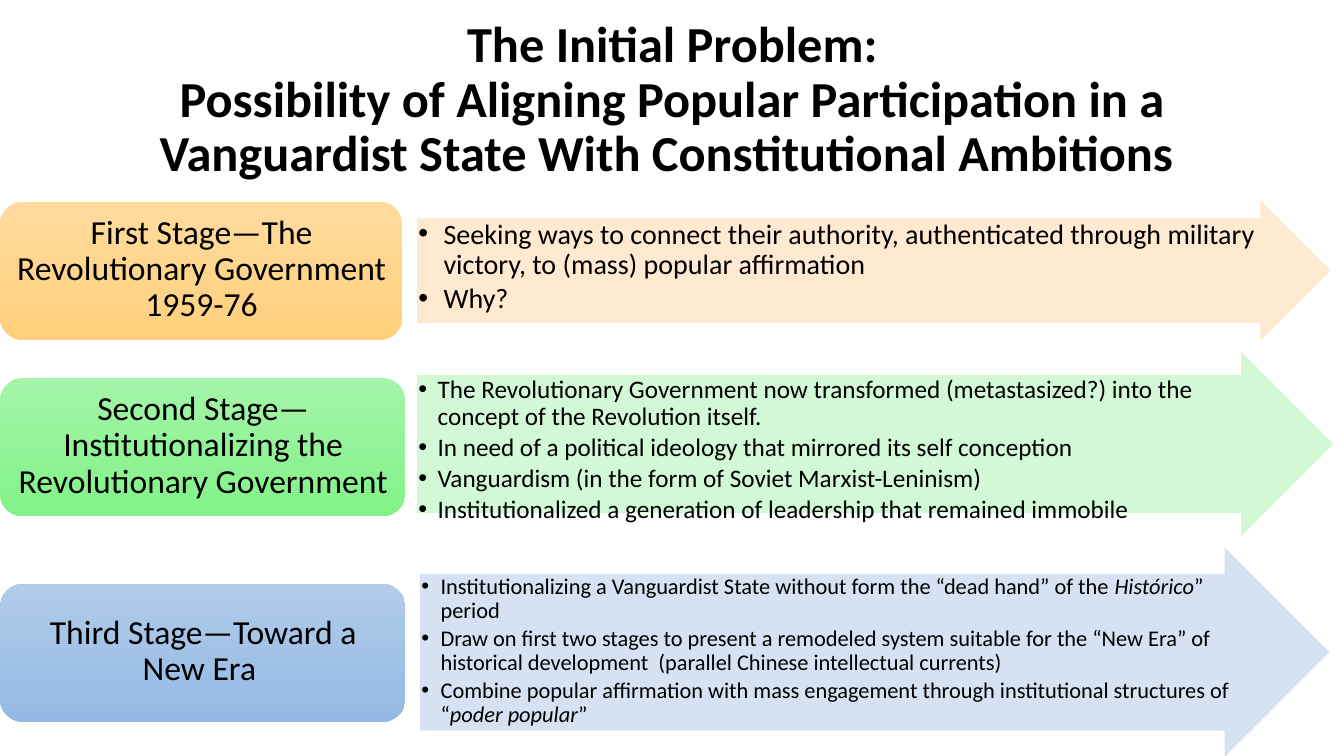
from lxml.etree import SubElement
from pptx import Presentation
from pptx.dml.color import RGBColor
from pptx.enum.shapes import MSO_SHAPE as Preset
from pptx.enum.text import MSO_ANCHOR as Anchor, PP_ALIGN as Align
from pptx.oxml.ns import qn
from pptx.util import Inches, Pt


def color(hex_code):
    return RGBColor.from_string(hex_code)


def add_text(left, top, width, height, paragraphs, size, anchor, bold=False, indent=None):
    box = slide.shapes.add_textbox(Inches(left), Inches(top), Inches(width), Inches(height))
    frame = box.text_frame
    frame.word_wrap = True
    frame.vertical_anchor = anchor
    if indent:
        frame.margin_left = frame.margin_right = Inches(0.01)
        frame.margin_top = frame.margin_bottom = Inches(0.01)
    for index, pieces in enumerate(paragraphs):
        paragraph = frame.add_paragraph() if index else frame.paragraphs[0]
        paragraph.line_spacing = 0.9
        paragraph.alignment = Align.LEFT if indent else Align.CENTER
        if indent:
            paragraph.space_after = Pt(size * 0.15)
            properties = paragraph._p.get_or_add_pPr()
            properties.set("marL", str(Inches(indent)))
            properties.set("indent", str(-Inches(indent)))
            SubElement(properties, qn("a:buFont")).set("typeface", "Arial")
            SubElement(properties, qn("a:buChar")).set("char", "•")
        for position, piece in enumerate(pieces):
            for line_number, line in enumerate(piece.split("\n")):
                if line_number:
                    paragraph.add_line_break()
                run = paragraph.add_run()
                run.text = line
                run.font.name = "Calibri"
                run.font.size = Pt(size)
                run.font.bold = bold
                run.font.italic = position % 2 == 1
                run.font.color.rgb = color("000000")


presentation = Presentation()
presentation.slide_width = Inches(13.33)
presentation.slide_height = Inches(7.5)
slide = presentation.slides.add_slide(presentation.slide_layouts[6])

title = (
    "The Initial Problem:\nPossibility of Aligning Popular Participation in a "
    "Vanguardist State With Constitutional Ambitions "
)
add_text(0.92, 0, 11.5, 2, [[title]], 36, Anchor.MIDDLE, bold=True)

# Odd-numbered pieces of a point are set in italics.
stages = [
    {
        "name": "First Stage—The Revolutionary Government 1959-76",
        "label": (2, 3.99), "gradient": ("FFDB9E", "FFD07C"),
        "arrow": (4.14, 2, 9.05, 1.37), "tint": "FFE8CC", "size": 20, "indent": 0.25,
        "points": [
            ["Seeking ways to connect their authority, authenticated through military "
             "victory, to (mass) popular affirmation"],
            ["Why?"],
        ],
    },
    {
        "name": "Second Stage—Institutionalizing the Revolutionary Government",
        "label": (3.75, 4.02), "gradient": ("A4F4A9", "82F388"),
        "arrow": (4.14, 3.5, 9.08, 1.81), "tint": "CFF8D1", "size": 18, "indent": 0.19,
        "points": [
            ["The Revolutionary Government now transformed (metastasized?) into the "
             "concept of the Revolution itself."],
            ["In need of a political ideology that mirrored its self conception"],
            ["Vanguardism (in the form of Soviet Marxist-Leninism)"],
            ["Institutionalized a generation of leadership that remained immobile"],
        ],
    },
    {
        "name": "Third Stage—Toward a New Era ",
        "label": (5.79, 4.02), "gradient": ("B1CBE9", "93B9E4"),
        "arrow": (4.17, 5.44, 9.01, 2.06), "tint": "D2DFF0", "size": 16, "indent": 0.19,
        "points": [
            ["Institutionalizing a Vanguardist State without form the “dead hand” of the ",
             "Histórico", "” period"],
            ["Draw on first two stages to present a remodeled system suitable for the "
             "“New Era” of historical development  (parallel Chinese intellectual currents)"],
            ["Combine popular affirmation with mass engagement through institutional "
             "structures of “", "poder popular", "”"],
        ],
    },
]

for stage in stages:
    left, top, width, height = stage["arrow"]
    arrow = slide.shapes.add_shape(
        Preset.RIGHT_ARROW, Inches(left), Inches(top), Inches(width), Inches(height))
    arrow.shadow.inherit = False
    arrow.adjustments[0] = 0.75
    arrow.adjustments[1] = 0.5
    arrow.fill.solid()
    arrow.fill.fore_color.rgb = color(stage["tint"])
    arrow.line.color.rgb = color(stage["tint"])
    arrow.line.width = Pt(0.5)
    for tint in arrow._element.spPr.iter(qn("a:srgbClr")):
        SubElement(tint, qn("a:alpha")).set("val", "90000")
    add_text(left, top + height / 8, width - height * 0.375, height * 0.75,
             stage["points"], stage["size"], Anchor.TOP, indent=stage["indent"])

    label_top, label_width = stage["label"]
    label = slide.shapes.add_shape(
        Preset.ROUNDED_RECTANGLE, 0, Inches(label_top), Inches(label_width), Inches(1.37))
    label.shadow.inherit = False
    label.line.fill.background()
    label.fill.gradient()
    label.fill.gradient_angle = 270
    for stop, shade in zip(label.fill.gradient_stops, stage["gradient"]):
        stop.color.rgb = color(shade)
    add_text(0.07, label_top + 0.06, label_width - 0.13, 1.23,
             [[stage["name"]]], 24, Anchor.MIDDLE)

presentation.save("out.pptx")
